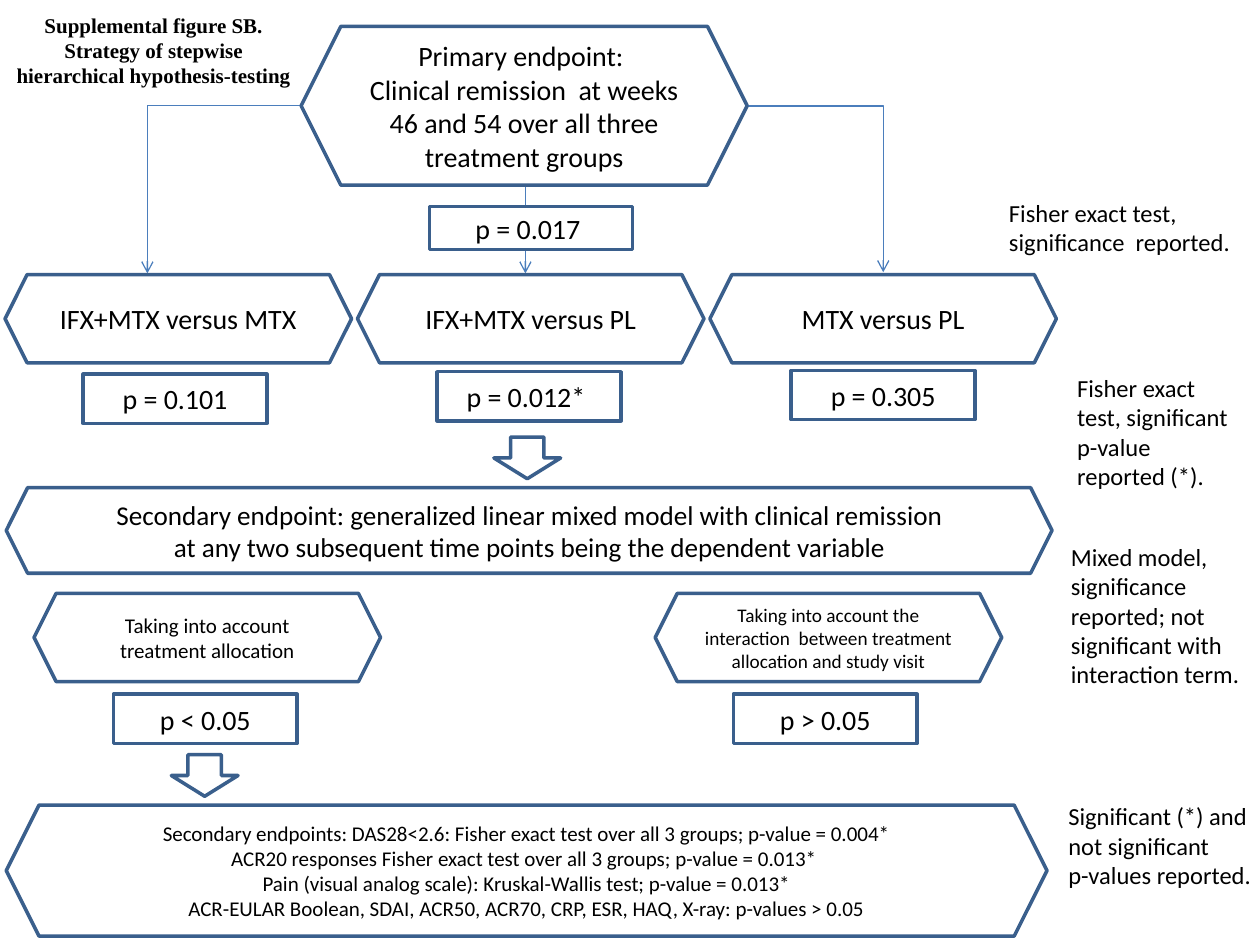
from dataclasses import dataclass

from lxml import etree
from pptx import Presentation
from pptx import util as u
from pptx.dml.color import RGBColor
from pptx.enum import shapes, text
from pptx.oxml.ns import qn

# Grid: 100 columns by 75 rows on a 10 x 7.5 inch slide
CELL = u.Inches(0.1)
NAVY, BLUE, WHITE, BLACK = "3A5F8C", "4B7EBC", "FFFFFF", "000000"
HEX = shapes.MSO_SHAPE.HEXAGON
RECT = shapes.MSO_SHAPE.RECTANGLE
DOWN = shapes.MSO_SHAPE.DOWN_ARROW
MID, LEFT = text.PP_ALIGN.CENTER, text.PP_ALIGN.LEFT


@dataclass
class Box:
    kind: shapes.MSO_SHAPE
    col: float
    row: float
    wide: float
    high: float
    paras: tuple = ()
    size: float = 16


@dataclass
class Note:
    col: float
    row: float
    wide: float
    high: float
    paras: tuple
    wrap: bool = False


@dataclass
class Link:
    start: tuple
    end: tuple
    bent: bool = False


def grid(*cells: float) -> list:
    return [round(c * CELL) for c in cells]


def paint(code: str) -> RGBColor:
    return RGBColor.from_string(code)


def write(frame, paras: tuple, size: float, align,
          face: str = "Calibri", bold: bool = False) -> None:
    """Fill a frame; a newline inside a paragraph is a line break."""
    for i, words in enumerate(paras):
        para = frame.add_paragraph() if i else frame.paragraphs[0]
        para.alignment = align
        para.space_before = u.Pt(0)
        for j, line in enumerate(words.split("\n")):
            if j:
                para.add_line_break()
            run = para.add_run()
            run.text = line
            font = run.font
            font.name, font.size, font.bold = face, u.Pt(size), bold
            font.color.rgb = paint(BLACK)


def draw_box(slide, box: Box) -> None:
    shape = slide.shapes.add_shape(
        box.kind, *grid(box.col, box.row, box.wide, box.high))
    shape.shadow.inherit = False
    shape.fill.solid()
    shape.fill.fore_color.rgb = paint(WHITE)
    shape.line.color.rgb = paint(NAVY)
    shape.line.width = u.Pt(2)
    frame = shape.text_frame
    frame.word_wrap = True
    frame.vertical_anchor = text.MSO_ANCHOR.MIDDLE
    write(frame, box.paras, box.size, MID)


def draw_note(slide, note: Note) -> None:
    area = slide.shapes.add_textbox(
        *grid(note.col, note.row, note.wide, note.high))
    area.text_frame.word_wrap = note.wrap
    write(area.text_frame, note.paras, 14, LEFT)


def draw_link(slide, link: Link) -> None:
    kind = shapes.MSO_CONNECTOR.ELBOW if link.bent else shapes.MSO_CONNECTOR.STRAIGHT
    wire = slide.shapes.add_connector(kind, *grid(*link.start, *link.end))
    wire.line.color.rgb = paint(BLUE)
    wire.line.width = u.Pt(0.75)
    props = wire._element.spPr
    if link.bent:  # one corner only
        props.find(qn("a:prstGeom")).set("prst", "bentConnector2")
    etree.SubElement(props.find(qn("a:ln")), qn("a:tailEnd"), type="arrow")
    etree.SubElement(props, qn("a:effectLst"))


def draw_title(slide, words: str) -> None:
    title = slide.shapes.title
    title.left, title.top, title.width, title.height = grid(0.3, 0.5, 23.8, 7.1)
    frame = title.text_frame
    frame.word_wrap = True
    frame.auto_size = text.MSO_AUTO_SIZE.NONE
    frame.vertical_anchor = text.MSO_ANCHOR.TOP
    write(frame, (words,), 12, MID, "Times New Roman", True)


def hexa(col: float, row: float, words: str, size: float = 16) -> Box:
    return Box(HEX, col, row, 27.5, 7, (words,), size)


def prob(col: float, row: float, words: str) -> Box:
    return Box(RECT, col, row, 14.6, 3.9, (words,))


def arrow(col: float, row: float) -> Box:
    return Box(DOWN, col, row, 5.3, 3.3)


LINKS = [
    Link((59.3, 8.4), (70.1, 21.6), True),
    Link((23.9, 8.4), (11.7, 21.7), True),
    Link((41.7, 14.7), (41.7, 21.7)),
]

# Group comparisons and their p-values, left to right
PAIRS = [
    ("IFX+MTX versus MTX", "p = 0.101", 29.7),
    ("IFX+MTX versus PL", "p = 0.012* ", 29.5),
    ("MTX versus PL", "p = 0.305", 29.4),
]

BOXES = [
    # Primary endpoint
    Box(HEX, 23.9, 2.1, 35.4, 12.6, (
        "Primary endpoint: ",
        "Clinical remission  at weeks 46 and 54 over all three treatment groups")),
    Box(RECT, 34.1, 16.4, 16.1, 3.4, ("p = 0.017 ",)),
    *(hexa(0.4 + 27.97 * i, 21.8, pair) for i, (pair, _, _) in enumerate(PAIRS)),
    *(prob(6.6 + 28.1 * i, row, p) for i, (_, p, row) in enumerate(PAIRS)),
    arrow(39.2, 34.7),
    # Secondary endpoint
    Box(HEX, 0.5, 38.7, 83, 6.8, (
        "Secondary endpoint: generalized linear mixed model with clinical "
        "remission at any two subsequent time points being the dependent "
        "variable",), 15.5),
    hexa(2.7, 47.1, "Taking into account treatment allocation", 12),
    hexa(52, 47.1, "Taking into account the interaction  between treatment "
                   "allocation and study visit", 11),
    prob(9, 55.1, "p < 0.05"),
    prob(58.2, 55.1, "p > 0.05"),
    arrow(13.6, 59.9),
    # Further endpoints
    Box(HEX, 0.5, 63.9, 82.6, 10.4, (
        "Secondary endpoints: DAS28<2.6: Fisher exact test over all 3 groups; "
        "p-value = 0.004*",
        "ACR20 responses Fisher exact test over all 3 groups; p-value = 0.013* ",
        "Pain (visual analog scale): Kruskal-Wallis test; p-value = 0.013*",
        "ACR-EULAR Boolean, SDAI, ACR50, ACR70, CRP, ESR, HAQ, X-ray: "
        "p-values > 0.05"), 12),
]

NOTES = [
    Note(79.1, 15.2, 21, 5.7,
         ("Fisher exact test, significance  reported.",), True),
    Note(84.5, 29.1, 14.1, 10.4,
         ("Fisher exact \ntest, significant", "p-value \nreported (*).")),
    Note(84, 42.5, 15.5, 12.8,
         ("Mixed model, \nsignificance",
          "reported; not \nsignificant with \ninteraction term.")),
    Note(83.8, 63.1, 17.1, 8.1,
         ("Significant (*) and \nnot significant", "p-values reported.")),
]


def main() -> None:
    deck = Presentation()
    deck.slide_width, deck.slide_height = grid(100, 75)
    slide = deck.slides.add_slide(deck.slide_layouts[5])
    draw_title(slide, "Supplemental figure SB. Strategy of stepwise "
                      "hierarchical hypothesis-testing")
    # Links lie behind the boxes
    for link in LINKS:
        draw_link(slide, link)
    for box in BOXES:
        draw_box(slide, box)
    for note in NOTES:
        draw_note(slide, note)
    deck.save("out.pptx")


if __name__ == "__main__":
    main()
